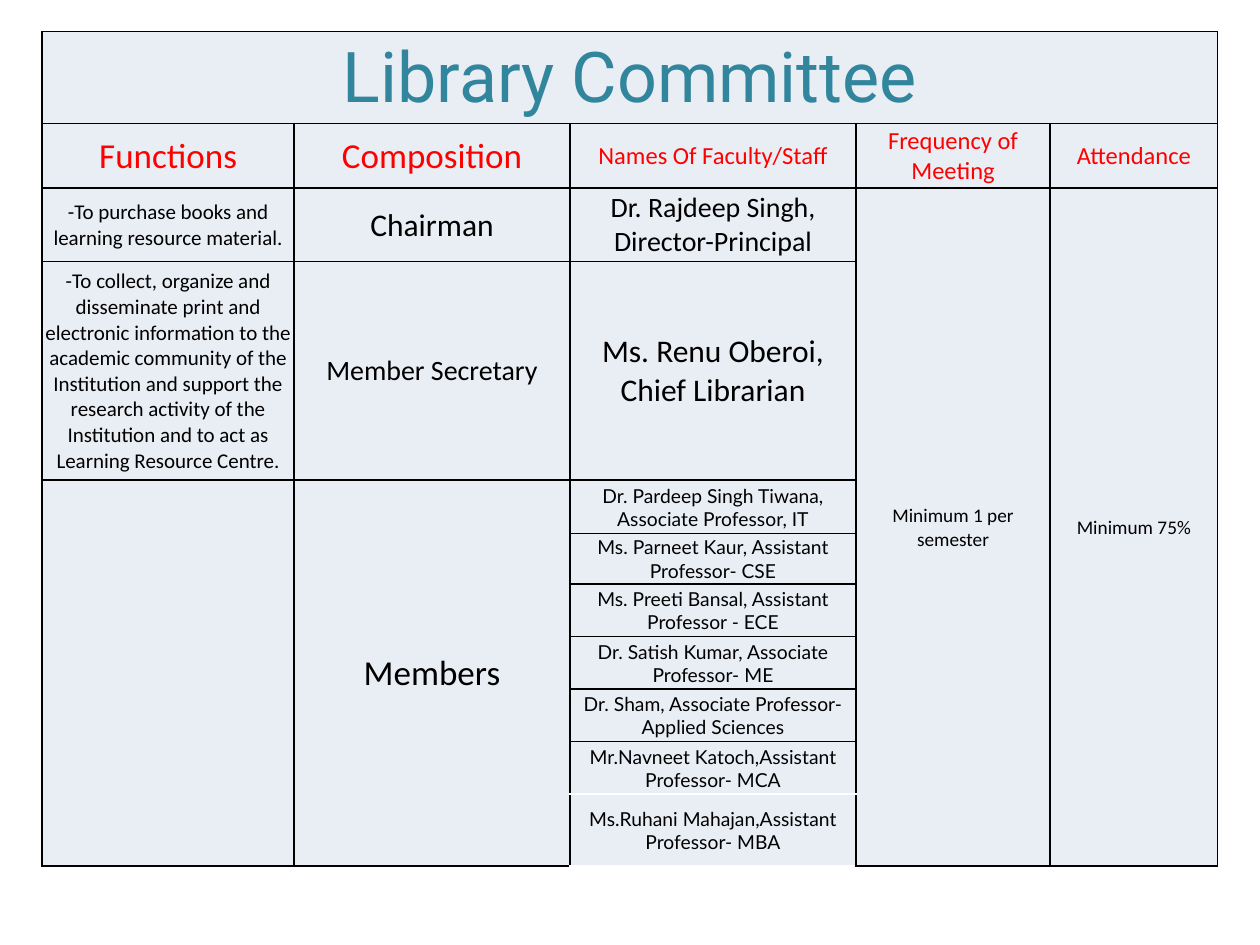
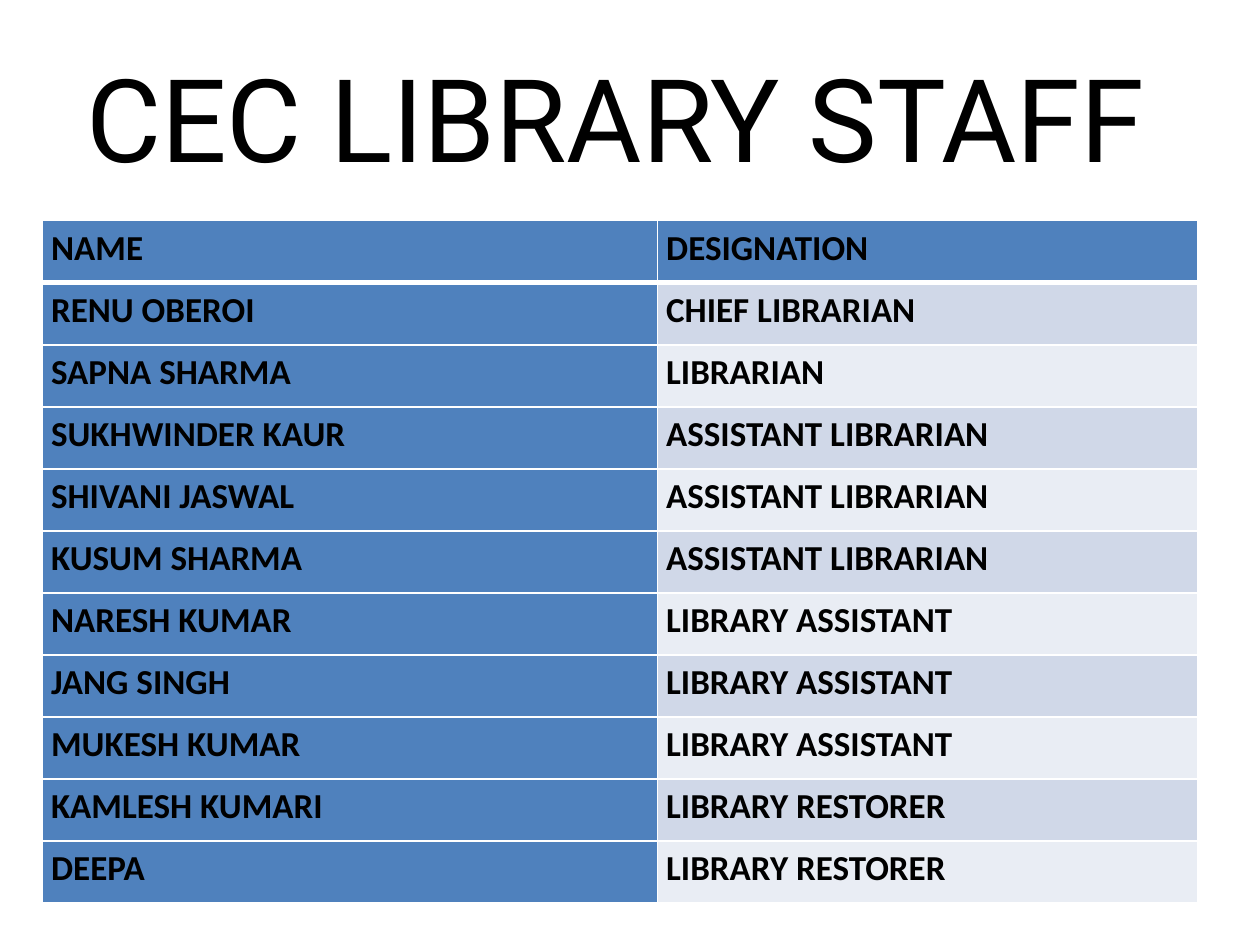
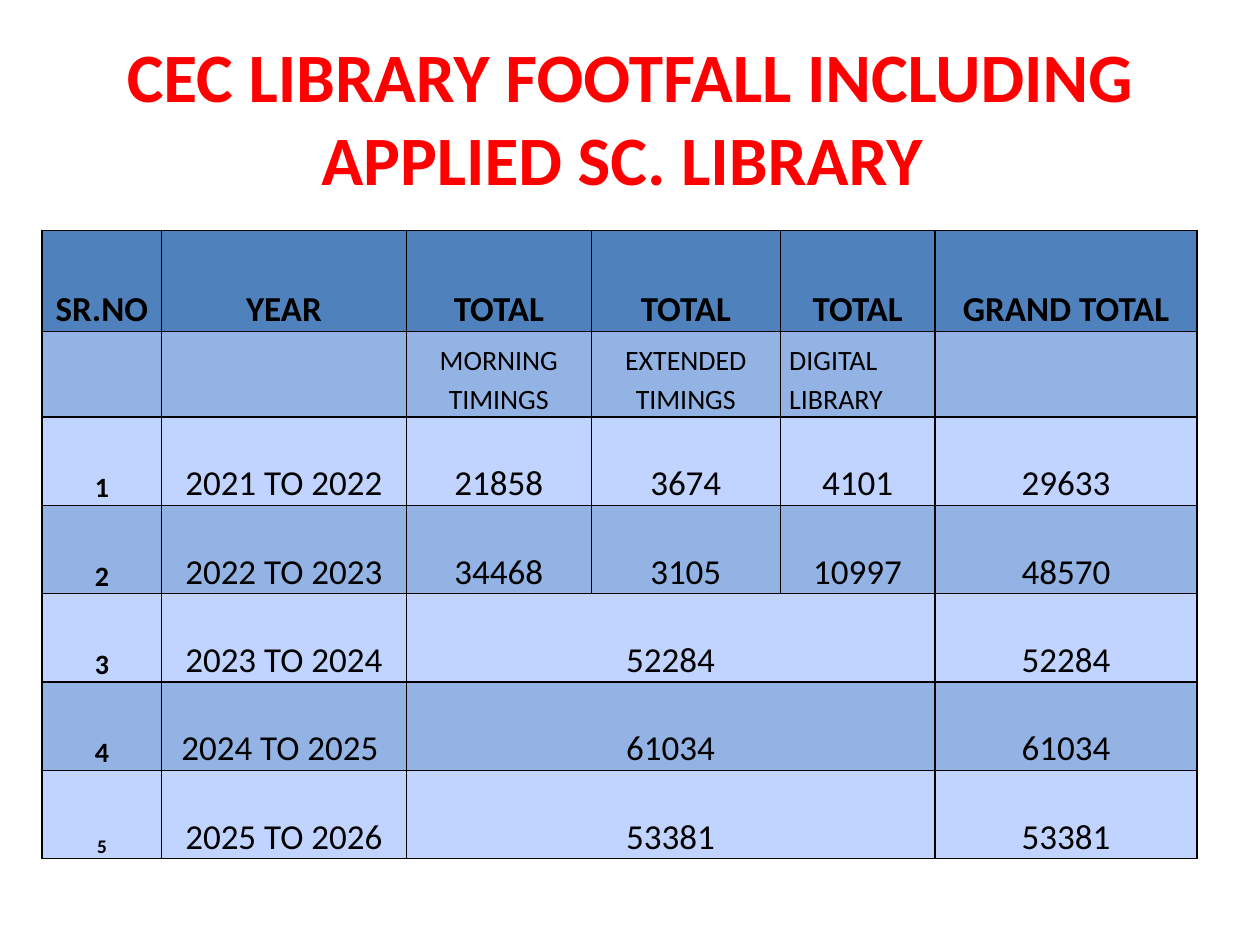
"""Build the three library slides: committee, staff and footfall."""
from lxml.etree import SubElement
from pptx import Presentation
from pptx.dml.color import RGBColor
from pptx.enum.text import MSO_ANCHOR, MSO_AUTO_SIZE, PP_ALIGN
from pptx.oxml.ns import qn
from pptx.util import Cm, Pt

MID, LOW, TOP = MSO_ANCHOR.MIDDLE, MSO_ANCHOR.BOTTOM, MSO_ANCHOR.TOP
LEFT, CENTER = PP_ALIGN.LEFT, PP_ALIGN.CENTER
FIXED = MSO_AUTO_SIZE.NONE
TITLE_ONLY, BLANK = 5, 6
EDGE = 0.85

INK = {
    "black": "000000", "white": "FFFFFF", "red": "FF0000", "teal": "31859C",
    "blue": "4F81BD", "mist": "E9EDF4", "haze": "D0D8E8",
    "sky": "C0D4FF", "dusk": "93B3E5",
}

HEADS = [("Functions", 20), ("Composition", 20), ("Names Of Faculty/Staff", 14),
         ("Frequency of Meeting", 14), ("Attendance", 14)]
DUTIES = [
    [("-To purchase books and learning resource material.", 12),
     ("Chairman", 18), ("Dr. Rajdeep Singh, Director-Principal", 16),
     ("Minimum 1 per semester", 11), ("Minimum 75%", 11)],
    [("-To collect, organize and disseminate print and electronic information "
      "to the academic community of the Institution and support the research "
      "activity of the Institution and to act as Learning Resource Centre.", 12),
     ("Member Secretary", 16), ("Ms. Renu Oberoi, Chief Librarian", 18)],
]
MEMBERS = [
    "Dr. Pardeep Singh Tiwana, Associate Professor, IT",
    "Ms. Parneet Kaur, Assistant Professor- CSE",
    "Ms. Preeti Bansal, Assistant Professor - ECE",
    "Dr. Satish Kumar, Associate Professor- ME",
    "Dr. Sham, Associate Professor-Applied Sciences",
    "Mr.Navneet Katoch,Assistant Professor- MCA",
    "Ms.Ruhani Mahajan,Assistant Professor- MBA",
]
STAFF = [
    ("NAME", "DESIGNATION"),
    ("RENU OBEROI", "CHIEF LIBRARIAN"),
    ("SAPNA SHARMA", "LIBRARIAN"),
    ("SUKHWINDER KAUR", "ASSISTANT LIBRARIAN"),
    ("SHIVANI JASWAL", "ASSISTANT LIBRARIAN"),
    ("KUSUM SHARMA", "ASSISTANT LIBRARIAN"),
    ("NARESH KUMAR", "LIBRARY ASSISTANT"),
    ("JANG SINGH", "LIBRARY ASSISTANT"),
    ("MUKESH KUMAR", "LIBRARY ASSISTANT"),
    ("KAMLESH KUMARI", "LIBRARY RESTORER"),
    ("DEEPA", "LIBRARY RESTORER"),
]
VISITS = [
    ("SR.NO", "YEAR", "TOTAL", "TOTAL", "TOTAL", "GRAND TOTAL"),
    ("", "", "MORNING TIMINGS", "EXTENDED TIMINGS", "DIGITAL LIBRARY", ""),
    ("1", "2021 TO 2022", "21858", "3674", "4101", "29633"),
    ("2", "2022 TO 2023", "34468", "3105", "10997", "48570"),
    ("3", "2023 TO 2024", "52284", "", "", "52284"),
    ("4", "2024 TO 2025 ", "61034", "", "", "61034"),
    ("5", "2025 TO 2026", "53381", "", "", "53381"),
]


def tint(name):
    """Return the named colour."""
    return RGBColor.from_string(INK[name])


def write(frame, text, size, color="black", font="Calibri", bold=False,
          align=CENTER, gap=1.0):
    """Put one run of text in a frame."""
    para = frame.paragraphs[0]
    para.alignment = align
    para.line_spacing = gap
    run = para.add_run()
    run.text = text
    run.font.size = Pt(size)
    run.font.name = font
    run.font.bold = bold
    run.font.color.rgb = tint(color)


def edge(cell, side, color, width=1):
    """Draw one side of a cell: L, R, T or B."""
    props = cell._tc.get_or_add_tcPr()
    tag = qn(f"a:ln{side}")
    line = props.find(tag)
    if line is None:
        line = SubElement(props, tag)
    line.clear()
    line.set("w", str(Pt(width)))
    fill = SubElement(line, qn("a:solidFill"))
    SubElement(fill, qn("a:srgbClr")).set("val", INK[color])


def paint(cell, color):
    """Fill a cell."""
    cell.fill.solid()
    cell.fill.fore_color.rgb = tint(color)


def grid(slide, top, cols, rows, line, anchor, pads):
    """Add a ruled table with sizes in centimetres."""
    frame = slide.shapes.add_table(len(rows), len(cols), Cm(EDGE), Cm(top),
                                   Cm(sum(cols)), Cm(sum(rows)))
    table = frame.table
    table.first_row = table.horz_banding = False
    for col, width in zip(table.columns, cols):
        col.width = Cm(width)
    for row, height in zip(table.rows, rows):
        row.height = Cm(height)
    side, roof = pads
    for cell in table.iter_cells():
        cell.margin_left = cell.margin_right = Cm(side)
        cell.margin_top, cell.margin_bottom = Cm(roof), Cm(0)
        cell.vertical_anchor = anchor
        for name in "LRTB":
            edge(cell, name, line)
    return table


def head(slide, text, size, **style):
    """Place and write the slide title."""
    title = slide.shapes.title
    title.left, title.top = Cm(1.27), Cm(0.76)
    title.width, title.height = Cm(22.86), Cm(3.18)
    frame = title.text_frame
    frame.auto_size = FIXED
    frame.word_wrap = True
    frame.vertical_anchor = MID
    write(frame, text, size, **style)


def board(slide):
    """Build the committee table."""
    cols = [5.08, 5.56, 5.77, 3.91, 3.38]
    rows = [1.85, 1.3, 1.48, 4.41, 1.07, 1.02] + [1.06] * 4 + [1.45]
    table = grid(slide, 0.64, cols, rows, "black", MID, (0.02, 0.02))
    for cell in table.iter_cells():
        paint(cell, "mist")
    last = len(rows) - 1
    spans = [(0, 0, 0, 4), (2, 3, last, 3), (2, 4, last, 4),
             (4, 0, last, 0), (4, 1, last, 1)]
    for top, left, low, right in spans:
        table.cell(top, left).merge(table.cell(low, right))
    write(table.cell(0, 0).text_frame, "Library Committee", 40, "teal", "Roboto")
    for r, line in enumerate([HEADS] + DUTIES, 1):
        for c, (text, size) in enumerate(line):
            color = "red" if r == 1 else "black"
            write(table.cell(r, c).text_frame, text, size, color)
    write(table.cell(4, 1).text_frame, "Members", 20)
    for r, text in enumerate(MEMBERS, 4):
        write(table.cell(r, 2).text_frame, text, 11, font="Lato")
    for r, side in [(last - 1, "B"), (last, "T"), (last, "B")]:
        edge(table.cell(r, 2), side, "white")


def roster(slide):
    """Build the staff table."""
    head(slide, "CEC LIBRARY STAFF ", 66, font="Roboto")
    table = grid(slide, 4.45, [12.4, 10.9], [1.25] * len(STAFF), "white",
                 TOP, (0.18, 0))
    for r, line in enumerate(STAFF):
        for c, text in enumerate(line):
            cell = table.cell(r, c)
            band = "haze" if r % 2 else "mist"
            paint(cell, "blue" if r == 0 or c == 0 else band)
            write(cell.text_frame, text, 20, bold=True, align=LEFT, gap=1.15)
    for c in range(2):
        edge(table.cell(0, c), "B", "white", 3)
        edge(table.cell(1, c), "T", "white", 3)


def visits(slide):
    """Build the footfall table."""
    head(slide, "CEC LIBRARY FOOTFALL INCLUDING APPLIED SC. LIBRARY ", 39.6,
         color="red", bold=True)
    cols = [2.41, 4.93, 3.73, 3.81, 3.12, 5.28]
    table = grid(slide, 4.65, cols, [2.03, 1.73] + [1.78] * 5, "black",
                 LOW, (0.18, 0))
    for r, line in enumerate(VISITS):
        band = "dusk" if r % 2 else "sky"
        for c, text in enumerate(line):
            cell = table.cell(r, c)
            paint(cell, band if r else "blue")
            if not text:
                continue
            size = 16 if r == 1 or (r and c == 0) else 20
            write(cell.text_frame, text, 11 if text == "5" else size,
                  bold=r == 0 or c == 0, gap=1.15 if r < 4 or c == 0 else 1.0,
                  align=LEFT if (r, c) == (1, 4) else CENTER)
        if r > 3:
            table.cell(r, 2).merge(table.cell(r, 4))


def main():
    """Build and save the deck."""
    deck = Presentation()
    deck.slide_width, deck.slide_height = Cm(25.4), Cm(19.05)
    for build, kind in [(board, BLANK), (roster, TITLE_ONLY), (visits, TITLE_ONLY)]:
        build(deck.slides.add_slide(deck.slide_layouts[kind]))
    deck.save("out.pptx")


if __name__ == "__main__":
    main()
